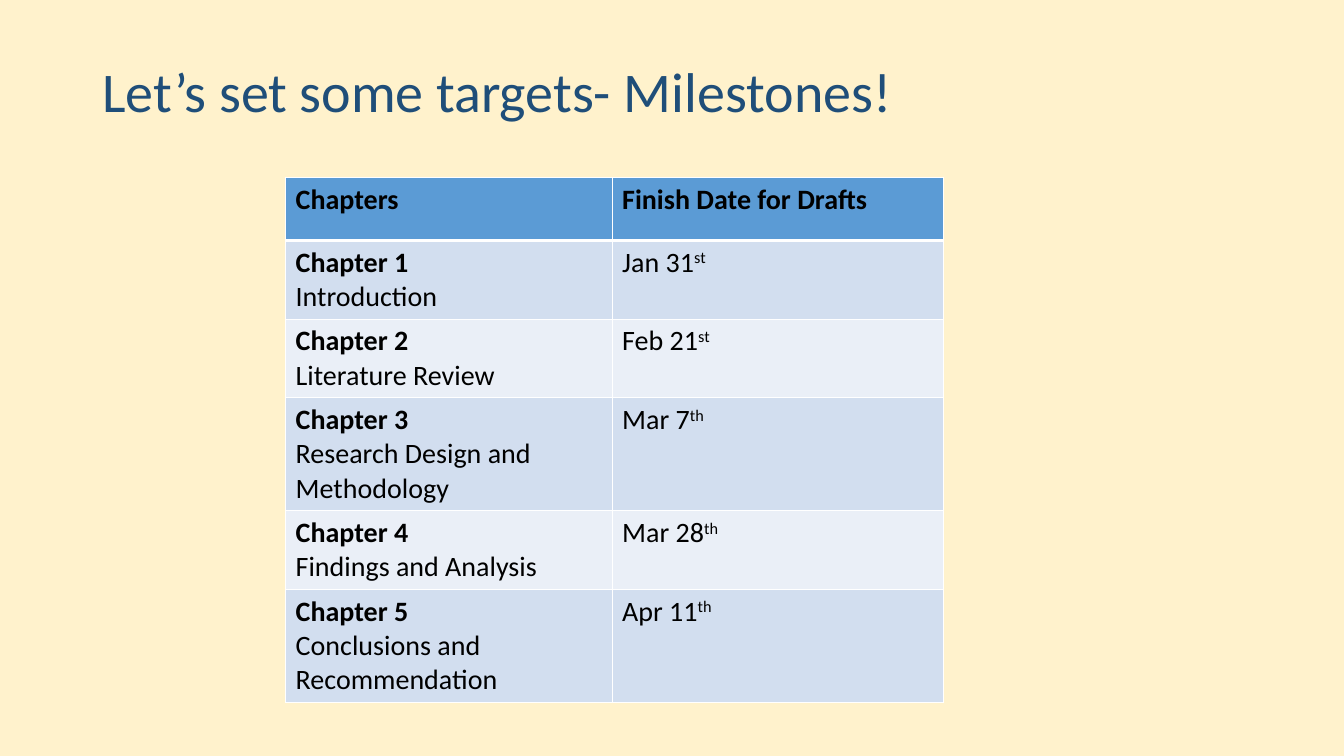
from dataclasses import dataclass

from lxml.etree import SubElement
from pptx import Presentation
from pptx.dml.color import RGBColor
from pptx.enum.text import MSO_ANCHOR, PP_ALIGN
from pptx.oxml.ns import qn
from pptx.slide import Slide
from pptx.table import _Cell
from pptx.text.text import _Run
from pptx.util import Emu, Pt


@dataclass(frozen=True)
class Theme:
    font: str = "Calibri"
    background: str = "FFF2CC"
    title: str = "1F4E79"
    text: str = "000000"
    header: str = "5B9BD5"
    bands: tuple[str, str] = ("D2DEEF", "EAEFF7")
    border: str = "FFFFFF"
    title_size: int = 40
    table_size: int = 20


@dataclass(frozen=True)
class Milestone:
    chapter: str
    topic: str
    day: str
    ordinal: str


THEME = Theme()
HEADINGS = ("Chapters", "Finish Date for Drafts")
MILESTONES = (
    Milestone("Chapter 1", "Introduction", "Jan 31", "st"),
    Milestone("Chapter 2", "Literature Review", "Feb 21", "st"),
    Milestone("Chapter 3", "Research Design and Methodology", "Mar 7", "th"),
    Milestone("Chapter 4", "Findings and Analysis", "Mar 28", "th"),
    Milestone("Chapter 5", "Conclusions and Recommendation", "Apr 11", "th"),
)
COLUMN_WIDTHS = (311, 316)
ROW_HEIGHT = 60
THIN, THICK = 1, 3


def px(length: int) -> Emu:
    return Emu(length * 9525)


def format_run(run: _Run, size: int, color: str, bold: bool = False) -> None:
    run.font.name = THEME.font
    run.font.size = Pt(size)
    run.font.bold = bold
    run.font.color.rgb = RGBColor.from_string(color)


def style_cell(cell: _Cell, fill: str, top: int, bottom: int) -> None:
    # Borders come before the fill in the cell properties
    properties = cell._tc.get_or_add_tcPr()
    for side, width in (("L", THIN), ("R", THIN), ("T", top), ("B", bottom)):
        line = SubElement(properties, qn(f"a:ln{side}"), w=str(Pt(width)))
        solid = SubElement(line, qn("a:solidFill"))
        SubElement(solid, qn("a:srgbClr"), val=THEME.border)
    cell.fill.solid()
    cell.fill.fore_color.rgb = RGBColor.from_string(fill)


def add_title(slide: Slide, text: str) -> None:
    title = slide.shapes.title
    title.left, title.top, title.width, title.height = map(px, (88, 38, 1104, 104))
    title.text_frame.text = text
    title.text_frame.vertical_anchor = MSO_ANCHOR.MIDDLE
    paragraph = title.text_frame.paragraphs[0]
    paragraph.alignment = PP_ALIGN.LEFT
    paragraph.line_spacing = 0.9
    format_run(paragraph.runs[0], THEME.title_size, THEME.title)


def add_milestone_table(slide: Slide) -> None:
    row_count = len(MILESTONES) + 1
    table = slide.shapes.add_table(
        row_count, len(HEADINGS), px(272), px(169),
        px(sum(COLUMN_WIDTHS)), px(ROW_HEIGHT * row_count)).table
    for column, width in zip(table.columns, COLUMN_WIDTHS):
        column.width = px(width)
    for row in table.rows:
        row.height = px(ROW_HEIGHT)

    # Header row
    for cell, heading in zip(table.rows[0].cells, HEADINGS):
        style_cell(cell, THEME.header, THIN, THICK)
        cell.text_frame.text = heading
        format_run(cell.text_frame.paragraphs[0].runs[0],
                   THEME.table_size, THEME.text, bold=True)

    # One banded row per chapter
    for index, milestone in enumerate(MILESTONES):
        chapter_cell, date_cell = table.rows[index + 1].cells
        for cell in (chapter_cell, date_cell):
            style_cell(cell, THEME.bands[index % 2],
                       THICK if index == 0 else THIN, THIN)

        chapter_cell.text_frame.text = f"{milestone.chapter}\n{milestone.topic}"
        chapter, topic = chapter_cell.text_frame.paragraphs
        format_run(chapter.runs[0], THEME.table_size, THEME.text, bold=True)
        format_run(topic.runs[0], THEME.table_size, THEME.text)

        date_cell.text_frame.text = milestone.day
        date = date_cell.text_frame.paragraphs[0]
        ordinal = date.add_run()
        ordinal.text = milestone.ordinal
        for run in date.runs:
            format_run(run, THEME.table_size, THEME.text)
        ordinal._r.get_or_add_rPr().set("baseline", "30000")


def main() -> None:
    presentation = Presentation()
    presentation.slide_width, presentation.slide_height = px(1280), px(720)
    slide = presentation.slides.add_slide(
        presentation.slide_layouts.get_by_name("Title Only"))
    slide.background.fill.solid()
    slide.background.fill.fore_color.rgb = RGBColor.from_string(THEME.background)
    add_title(slide, "Let’s set some targets- Milestones!")
    add_milestone_table(slide)
    presentation.save("out.pptx")


if __name__ == "__main__":
    main()
